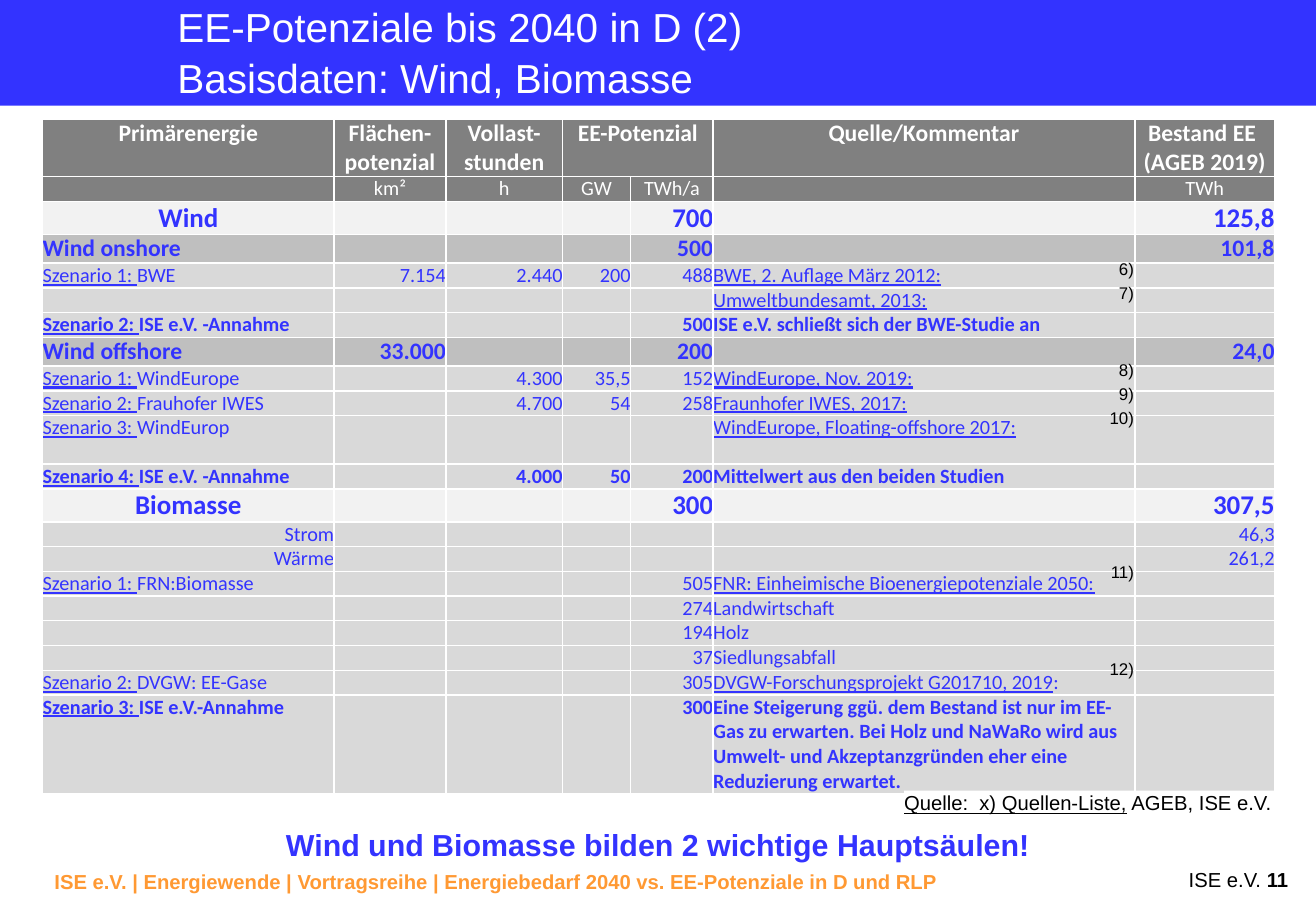
from lxml import etree
from pptx import Presentation
from pptx.dml.color import RGBColor
from pptx.enum.shapes import MSO_SHAPE
from pptx.enum.text import MSO_ANCHOR, MSO_AUTO_SIZE, PP_ALIGN
from pptx.oxml.ns import qn
from pptx.util import Pt

LEFT, MID, RIGHT = PP_ALIGN.LEFT, PP_ALIGN.CENTER, PP_ALIGN.RIGHT
TOP = MSO_ANCHOR.TOP
NONE = MSO_AUTO_SIZE.NONE
RECT = MSO_SHAPE.RECTANGLE

PX = 9144
BLUE, WHITE, BLACK, ORANGE = "3333FF", "FFFFFF", "000000", "FF9933"

TITLE = "EE-Potenziale bis 2040 in D (2)\nBasisdaten: Wind, Biomasse"
FOOT = "ISE e.V. | Energiewende | Vortragsreihe | Energiebedarf 2040 vs. EE-Potenziale in D und RLP"
CLAIM = "Wind und Biomasse bilden 2 wichtige Hauptsäulen!"
SOURCE = "Quelle:  x) Quellen-Liste,", " AGEB, ISE e.V."
PAGE = "ISE e.V. ", "11"

COLS = [240, 92, 96, 56, 68, 347, 115]
SIDES = [LEFT, RIGHT, RIGHT, RIGHT, RIGHT, LEFT, RIGHT]

# kind: size, bold, colour, fill, side of first cell, side of the rest
KINDS = {
    "head": (14, True, WHITE, "808080", MID),
    "unit": (12, False, WHITE, "808080", MID),
    "sum": (16, True, BLUE, "F2F2F2", MID),
    "part": (14, True, BLUE, "BFBFBF", LEFT),
    "item": (12, False, BLUE, "D9D9D9", LEFT),
    "use": (12, False, BLUE, "D9D9D9", RIGHT),
    "own": (12, True, BLUE, "D9D9D9", LEFT),
}

# "~" ends the underlined start of a cell
ROWS = [
    ("head", 2, "", ["Primärenergie", "Flächen-\npotenzial", "Vollast-\nstunden", "EE-Potenzial", "", "Quelle/Kommentar", "Bestand EE \n(AGEB 2019)"]),
    ("unit", 1, "", ["", "km²", "h", "GW", "TWh/a", "", "TWh"]),
    ("sum", 1, "", ["Wind", "", "", "", "700", "", "125,8"]),
    ("part", 1, "", ["Wind onshore", "", "", "", "500", "", "101,8"]),
    ("item", 1, "6)", ["Szenario 1: ~BWE", "7.154", "2.440", "200", "488", "BWE, 2. Auflage März 2012:~", ""]),
    ("item", 1, "7)", ["", "", "", "", "", "Umweltbundesamt, 2013:~", ""]),
    ("own", 1, "", ["Szenario 2: ~ISE e.V. -Annahme", "", "", "", "500", "ISE e.V. schließt sich der BWE-Studie an", ""]),
    ("part", 1, "", ["Wind offshore", "33.000", "", "", "200", "", "24,0"]),
    ("item", 1, "8)", ["Szenario 1: ~WindEurope", "", "4.300", "35,5", "152", "WindEurope, Nov. 2019:~", ""]),
    ("item", 1, "9)", ["Szenario 2: ~Frauhofer IWES", "", "4.700", "54", "258", "Fraunhofer IWES, 2017:~", ""]),
    ("item", 2, "10)", ["Szenario 3: ~WindEurop", "", "", "", "", "WindEurope, Floating-offshore 2017:~", ""]),
    ("own", 1, "", ["Szenario 4: ~ISE e.V. -Annahme", "", "4.000", "50", "200", "Mittelwert aus den beiden Studien", ""]),
    ("sum", 1, "", ["Biomasse", "", "", "", "300", "", "307,5"]),
    ("use", 1, "", ["Strom", "", "", "", "", "", "46,3"]),
    ("use", 1, "", ["Wärme", "", "", "", "", "", "261,2"]),
    ("item", 1, "11)", ["Szenario 1: ~FRN:Biomasse", "", "", "", "505", "FNR: Einheimische Bioenergiepotenziale 2050:~", ""]),
    ("item", 1, "", ["", "", "", "", "274", "Landwirtschaft", ""]),
    ("item", 1, "", ["", "", "", "", "194", "Holz", ""]),
    ("item", 1, "", ["", "", "", "", "37", "Siedlungsabfall", ""]),
    ("item", 1, "12)", ["Szenario 2: ~DVGW: EE-Gase", "", "", "", "305", "DVGW-Forschungsprojekt G201710, 2019~:", ""]),
    ("own", 4, "", ["Szenario 3: ~ISE e.V.-Annahme", "", "", "", "300", "Eine Steigerung ggü. dem Bestand ist nur im EE-Gas zu erwarten. Bei Holz und NaWaRo wird aus Umwelt- und Akzeptanzgründen eher eine Reduzierung erwartet.", ""]),
]


def px(*vals):
    return [int(v * PX) for v in vals]


def rgb(code):
    return RGBColor.from_string(code)


def write(para, text, size, color, bold=False, side=LEFT, face="Arial", tail=""):
    para.text = text
    if tail:
        para.add_run().text = tail
    para.alignment = side
    for run in para.runs:
        font = run.font
        font.name, font.size, font.bold = face, Pt(size), bold
        font.color.rgb = rgb(color)
    return para


def inset(frame, x, y):
    frame.margin_left = frame.margin_right = px(x)[0]
    frame.margin_top = frame.margin_bottom = px(y)[0]


def box(area, text, size, color, wrap=True, pad=(10, 5), **style):
    shape = slide.shapes.add_textbox(*px(*area))
    frame = shape.text_frame
    frame.word_wrap = wrap
    inset(frame, *pad)
    return shape, write(frame.paragraphs[0], text, size, color, **style)


def edge(cell):
    props = cell._tc.get_or_add_tcPr()
    for name in ("a:lnL", "a:lnR", "a:lnT", "a:lnB"):
        line = etree.SubElement(props, qn(name), w="12700")
        fill = etree.SubElement(line, qn("a:solidFill"))
        etree.SubElement(fill, qn("a:srgbClr"), val=WHITE)


def fill_cell(cell, text, col, kind):
    size, bold, color, back, first = KINDS[kind]
    side = MID if kind in ("head", "unit") else first if col == 0 else SIDES[col]
    inset(cell, 0, 0)
    edge(cell)
    cell.fill.solid()
    cell.fill.fore_color.rgb = rgb(back)
    para = cell.text_frame.paragraphs[0]
    if not text:
        para._p.get_or_add_endParaRPr().set("sz", "1000")
        return
    start, mark, tail = text.partition("~")
    write(para, start, size, color, bold, side, "Calibri", tail)
    if mark:
        para.runs[0].font.underline = True


deck = Presentation()
deck.slide_width, deck.slide_height = px(1083, 750)
slide = deck.slides.add_slide(deck.slide_layouts[5])

band = slide.shapes.add_shape(RECT, *px(0, 0, 1083, 87))
band.shadow.inherit = False
band.fill.solid()
band.fill.fore_color.rgb = rgb(BLUE)
band.line.fill.background()
band.element.getparent().insert(2, band.element)

title = slide.shapes.title
title.left, title.top, title.width, title.height = px(146, 0, 816, 81)
frame = title.text_frame
frame.auto_size, frame.vertical_anchor, frame.word_wrap = NONE, TOP, True
inset(frame, 0, 0)
write(frame.paragraphs[0], TITLE, 24, WHITE).line_spacing = 1.05

tall = [lines * KINDS[kind][0] * 5 / 3 for kind, lines, note, texts in ROWS]
grid = slide.shapes.add_table(len(ROWS), len(COLS), *px(35, 98, sum(COLS), sum(tall))).table
grid.first_row = grid.horz_banding = False
for col, wide in zip(grid.columns, COLS):
    col.width = px(wide)[0]
y = 98
for r, (kind, lines, note, texts) in enumerate(ROWS):
    grid.rows[r].height = px(tall[r])[0]
    for c, text in enumerate(texts):
        fill_cell(grid.cell(r, c), text, c, kind)
    if note:
        box((903, y - 7, 40, 27), note, 10, BLACK, side=RIGHT)
    y += tall[r]
grid.cell(0, 3).merge(grid.cell(0, 4))

box((35, 711, 780, 30), FOOT, 12, ORANGE, bold=True)
shape, para = box((666, 711, 404, 28), PAGE[0], 12, BLACK, side=RIGHT, tail=PAGE[1])
para.line_spacing = 0.9
para.runs[1].font.bold = True
shape, para = box((744, 651, 305, 20), SOURCE[0], 12, BLACK, wrap=False, pad=(0, 0), tail=SOURCE[1])
shape.fill.solid()
shape.fill.fore_color.rgb = rgb(WHITE)
para.runs[0].font.underline = True
box((0, 673, 1083, 44), CLAIM, 18, BLUE, pad=(7, 7), bold=True, side=MID)

deck.save("out.pptx")
